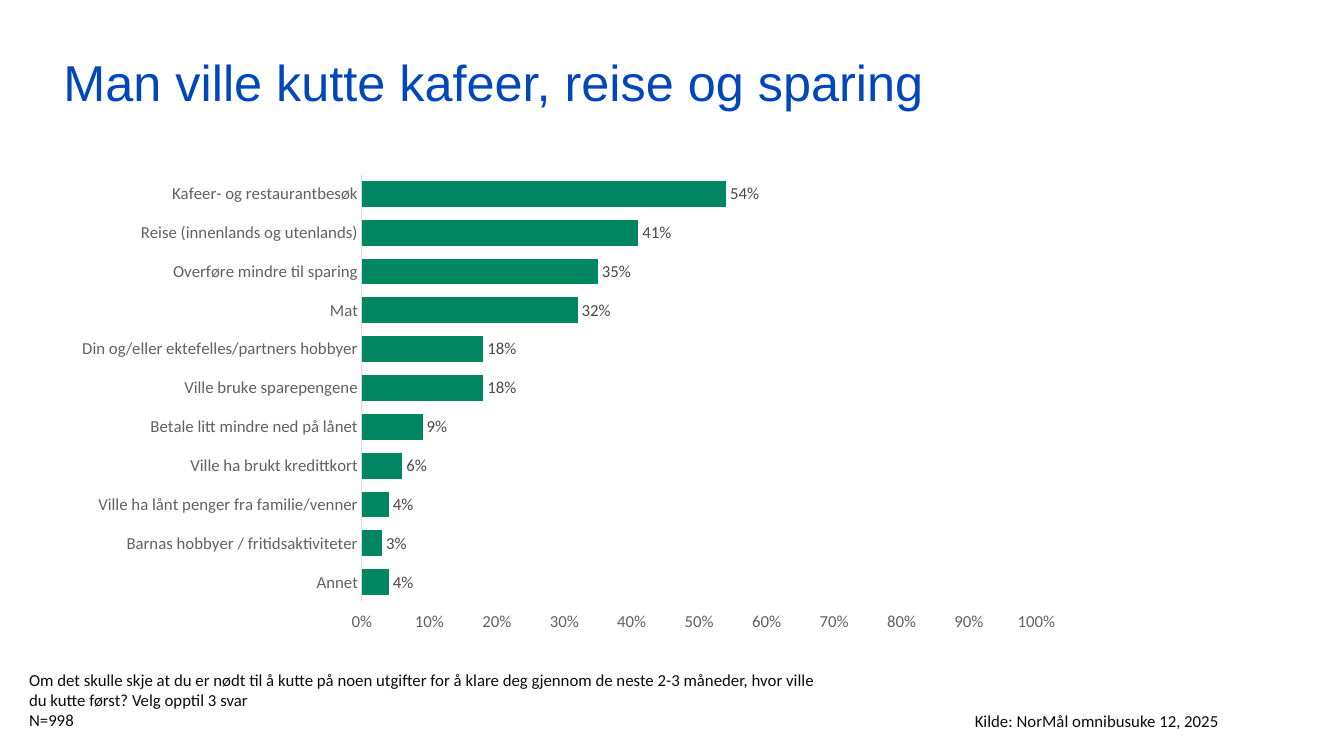
from lxml import etree
from pptx import Presentation
from pptx.chart.data import CategoryChartData
from pptx.dml.color import RGBColor
from pptx.enum.chart import (XL_CHART_TYPE, XL_LABEL_POSITION, XL_TICK_LABEL_POSITION,
                             XL_TICK_MARK)
from pptx.util import Inches, Pt

BAR = XL_CHART_TYPE.BAR_CLUSTERED
OUTSIDE = XL_LABEL_POSITION.OUTSIDE_END
NO_TICK = XL_TICK_MARK.NONE
FAR_SIDE = XL_TICK_LABEL_POSITION.HIGH

HEADING = "Man ville kutte kafeer, reise og sparing"
CUTS = [
    ("Kafeer- og restaurantbesøk", 0.54),
    ("Reise (innenlands og utenlands)", 0.41),
    ("Overføre mindre til sparing", 0.35),
    ("Mat", 0.32),
    ("Din og/eller ektefelles/partners hobbyer", 0.18),
    ("Ville bruke sparepengene", 0.18),
    ("Betale litt mindre ned på lånet", 0.09),
    ("Ville ha brukt kredittkort", 0.06),
    ("Ville ha lånt penger fra familie/venner", 0.04),
    ("Barnas hobbyer / fritidsaktiviteter", 0.03),
    ("Annet", 0.04),
]
QUESTION = [
    "Om det skulle skje at du er nødt til å kutte på noen utgifter for å klare deg "
    "gjennom de neste 2-3 måneder, hvor ville du kutte først? Velg opptil 3 svar",
    "N=998",
]
SOURCE = ["Kilde: NorMål omnibusuke 12, 2025"]
COLORS = {"heading": "0047BA", "bar": "008761", "text": "0C0C0C",
          "axis": "616161", "label": "494949", "line": "DBDBDB"}
CHART_BOX = (0.62, 1.64, 10.04, 4.73)
BARS_BOX = (3.59, 1.73, 6.69, 4.24)

deck = Presentation()
deck.slide_width, deck.slide_height = Inches(13.33), Inches(7.5)
slide = deck.slides.add_slide(deck.slide_layouts[6])


def style(font, color, size=12, face="Calibri"):
    font.name, font.size = face, Pt(size)
    font.color.rgb = RGBColor.from_string(COLORS[color])


def add_text(lines, box, color="text", size=12, face="Calibri", inset=(0.1, 0.05)):
    frame = slide.shapes.add_textbox(*map(Inches, box)).text_frame
    frame.word_wrap = True
    frame.margin_left = frame.margin_right = Inches(inset[0])
    frame.margin_top = frame.margin_bottom = Inches(inset[1])
    for i, line in enumerate(lines):
        paragraph = frame.paragraphs[0] if i == 0 else frame.add_paragraph()
        run = paragraph.add_run()
        run.text = line
        style(run.font, color, size, face)


def set_plot_area(chart):
    area = chart.plots[0]._element.getparent()
    namespace = etree.QName(area).namespace
    for old in area.findall(f"{{{namespace}}}layout"):
        area.remove(old)
    left, top, width, height = CHART_BOX
    bars_left, bars_top, bars_width, bars_height = BARS_BOX
    settings = {
        "layoutTarget": "inner", "xMode": "edge", "yMode": "edge",
        "x": (bars_left - left) / width, "y": (bars_top - top) / height,
        "w": bars_width / width, "h": bars_height / height,
    }
    layout = etree.Element(f"{{{namespace}}}layout")
    manual = etree.SubElement(layout, f"{{{namespace}}}manualLayout")
    for tag, value in settings.items():
        etree.SubElement(manual, f"{{{namespace}}}{tag}").set("val", str(value))
    area.insert(0, layout)


def add_cuts_chart():
    cuts = CategoryChartData(number_format="0%")
    cuts.categories = [name for name, _ in CUTS]
    cuts.add_series("Series 1", [share for _, share in CUTS])
    chart = slide.shapes.add_chart(BAR, *map(Inches, CHART_BOX), cuts).chart
    chart.has_legend = chart.has_title = False
    style(chart.font, "text", 10)
    set_plot_area(chart)

    answers, shares = chart.category_axis, chart.value_axis
    for axis in (answers, shares):
        axis.has_major_gridlines = False
        axis.major_tick_mark = axis.minor_tick_mark = NO_TICK
        style(axis.tick_labels.font, "axis")
    answers.reverse_order = True
    answers.format.line.color.rgb = RGBColor.from_string(COLORS["line"])
    answers.format.line.width = Pt(0.75)
    shares.minimum_scale, shares.maximum_scale, shares.major_unit = 0, 1, 0.1
    shares.tick_label_position = FAR_SIDE
    shares.format.line.fill.background()
    shares.tick_labels.number_format = "0%"
    shares.tick_labels.number_format_is_linked = False

    plot = chart.plots[0]
    plot.gap_width = 50
    plot.vary_by_categories = False
    bars = plot.series[0]
    bars.format.fill.solid()
    bars.format.fill.fore_color.rgb = RGBColor.from_string(COLORS["bar"])
    labels = bars.data_labels
    labels.show_value = True
    labels.position = OUTSIDE
    labels.number_format = "0%"
    labels.number_format_is_linked = False
    style(labels.font, "label")


add_text([HEADING], (0.63, 0.51, 10.04, 1.21), "heading", 36, "Arial", (0, 0))
add_cuts_chart()
add_text(QUESTION, (0.19, 6.59, 8.1, 0.71))
add_text(SOURCE, (9.57, 7, 2.96, 0.3))

deck.save("out.pptx")
